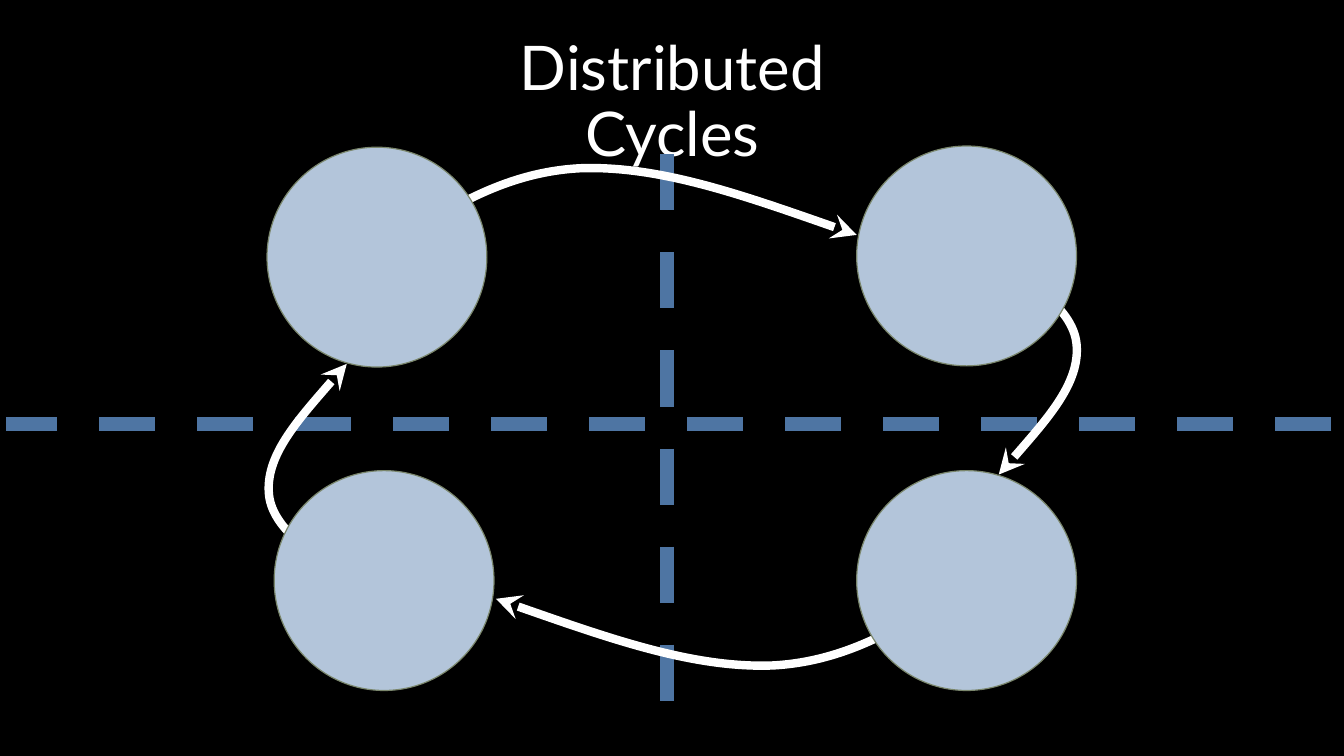
from dataclasses import dataclass

from lxml import etree
from pptx import Presentation
from pptx.dml.color import RGBColor
from pptx.enum import dml, shapes, text
from pptx.oxml import ns
from pptx.util import Cm, Pt

BLACK, WHITE = "000000", "FFFFFF"
DASH, NODE, EDGE = "4E75A3", "B3C5DA", "7A866C"
SIZE = 5.54
Point = tuple[float, float]


@dataclass
class Rule:
    start: Point
    end: Point


@dataclass
class Arc:
    """Bezier points in cm, and the sum of each point and its half-turn twin."""
    points: list[Point]
    total: Point

    def turned(self) -> list[Point]:
        return [(self.total[0] - x, self.total[1] - y) for x, y in self.points]


RULES = [Rule((33.55, 10.69), (0.15, 10.69)), Rule((16.81, 3.89), (16.81, 18.54))]
ARCS = [
    Arc([(9.53, 6.43), (11.07, 5.38), (12.62, 4.34), (14.63, 4.24),
         (16.64, 4.17), (19.1, 5.05), (21.59, 5.92)], (34.09, 21.01)),
    Arc([(24.56, 6.25), (25.81, 6.99), (27.03, 7.72), (27.13, 8.66),
         (27.23, 9.63), (26.19, 10.8), (25.17, 11.96)], (33.91, 21.13)),
]
NODES = [(6.73, 3.71), (6.91, 11.86), (21.59, 11.86), (21.59, 3.68)]


def paint(fill, color: str) -> None:
    fill.solid()
    fill.fore_color.rgb = RGBColor.from_string(color)


def stroke(item, color: str, width: float) -> None:
    paint(item.line.fill, color)
    item.line.width = Pt(width)


def add_rule(slide, rule: Rule) -> None:
    line = slide.shapes.add_connector(
        shapes.MSO_CONNECTOR.STRAIGHT,
        *(Cm(v) for v in rule.start + rule.end))
    stroke(line, DASH, 10)
    line.line.dash_style = dml.MSO_LINE.DASH
    etree.SubElement(line.element.spPr, ns.qn("a:effectLst"))


def add_arrow(slide, points: list[Point]) -> None:
    """Draw a smooth arrow by making each three line segments one Bezier."""
    first, *rest = [(Cm(x), Cm(y)) for x, y in points]
    form = slide.shapes.build_freeform(*first)
    form.add_line_segments(rest, close=False)
    arrow = form.convert_to_shape()
    arrow.shadow.inherit = False
    arrow.fill.background()
    stroke(arrow, WHITE, 6)
    steps = arrow.element.xpath(".//a:lnTo")
    for i in range(0, len(steps), 3):
        curve = etree.Element(ns.qn("a:cubicBezTo"))
        steps[i].addprevious(curve)
        for step in steps[i:i + 3]:
            curve.append(step[0])
            step.getparent().remove(step)
    outline = arrow.element.xpath("./p:spPr/a:ln")[0]
    etree.SubElement(outline, ns.qn("a:tailEnd"), type="stealth")


def add_node(slide, spot: Point) -> None:
    node = slide.shapes.add_shape(
        shapes.MSO_SHAPE.OVAL, Cm(spot[0]), Cm(spot[1]), Cm(SIZE), Cm(SIZE))
    node.shadow.inherit = False
    paint(node.fill, NODE)
    stroke(node, EDGE, 0.85)


def set_title(slide) -> None:
    title = slide.shapes.title
    title.left, title.top = Cm(2.34), Cm(0.51)
    title.width, title.height = Cm(29.21), Cm(4.19)
    frame = title.text_frame
    frame.text = "Distributed\vCycles"
    frame.word_wrap = True
    frame.auto_size = text.MSO_AUTO_SIZE.NONE
    frame.vertical_anchor = text.MSO_ANCHOR.MIDDLE
    para = frame.paragraphs[0]
    para.alignment = text.PP_ALIGN.CENTER
    para.line_spacing = 0.9
    para.font.name = "Lato"
    para.font.size = Pt(44)
    para.font.color.rgb = RGBColor.from_string(WHITE)


def main() -> None:
    deck = Presentation()
    deck.slide_width, deck.slide_height = Cm(33.87), Cm(19.05)
    slide = deck.slides.add_slide(deck.slide_layouts[5])
    paint(slide.background.fill, BLACK)
    set_title(slide)
    for rule in RULES:
        add_rule(slide, rule)
    for arc in ARCS:
        add_arrow(slide, arc.points)
        add_arrow(slide, arc.turned())
    for spot in NODES:
        add_node(slide, spot)
    deck.save("out.pptx")


if __name__ == "__main__":
    main()
